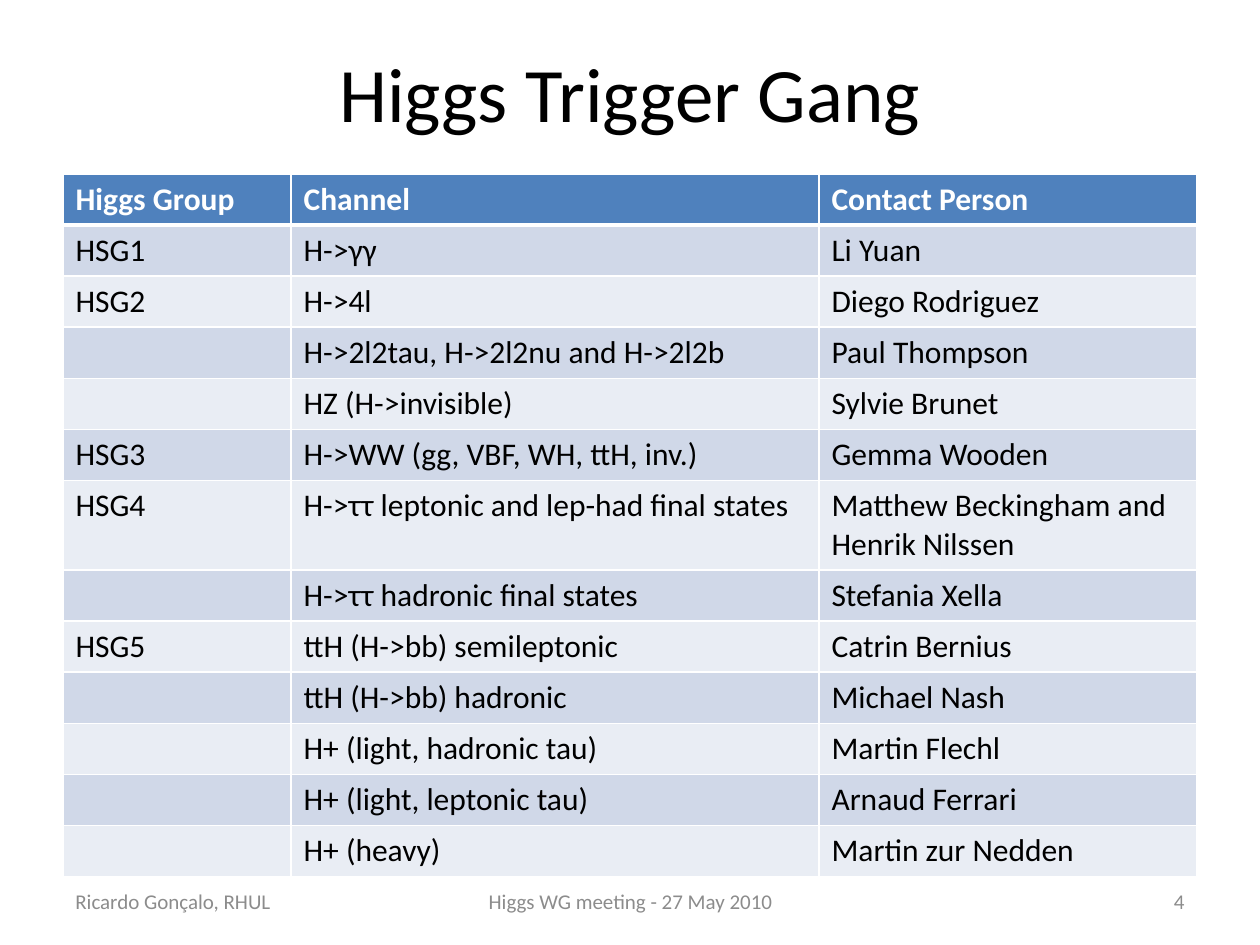
from dataclasses import dataclass
from typing import NamedTuple

from lxml import etree
from pptx import Presentation
from pptx.dml.color import RGBColor
from pptx.enum import text
from pptx.oxml import ns
from pptx.util import Inches, Pt


@dataclass(frozen=True)
class Theme:
    font: str = "Calibri"
    title_size: int = 44
    table_size: int = 18
    footer_size: int = 12
    ink: str = "000000"
    paper: str = "FFFFFF"
    muted: str = "8C8C8C"
    header: str = "4F81BD"
    bands: tuple[str, str] = ("D0D8E8", "E9EDF4")
    thin: int = 1
    thick: int = 3


class Contact(NamedTuple):
    group: str
    channel: str
    person: str


class Footer(NamedTuple):
    content: str
    left: float
    width: float
    alignment: text.PP_ALIGN


THEME = Theme()
HEADINGS = Contact("Higgs Group", "Channel", "Contact Person")
CONTACTS = [
    Contact("HSG1", "H->γγ", "Li Yuan"),
    Contact("HSG2", "H->4l", "Diego Rodriguez"),
    Contact("", "H->2l2tau, H->2l2nu and H->2l2b", "Paul Thompson"),
    Contact("", "HZ (H->invisible)", "Sylvie Brunet"),
    Contact("HSG3", "H->WW (gg, VBF, WH, ttH, inv.)", "Gemma Wooden"),
    Contact("HSG4", "H->ττ leptonic and lep-had final states",
            "Matthew Beckingham and Henrik Nilssen"),
    Contact("", "H->ττ hadronic final states", "Stefania Xella"),
    Contact("HSG5", "ttH (H->bb) semileptonic", "Catrin Bernius"),
    Contact("", "ttH (H->bb) hadronic", "Michael Nash"),
    Contact("", "H+ (light, hadronic tau)", "Martin Flechl"),
    Contact("", "H+ (light, leptonic tau)", "Arnaud Ferrari"),
    Contact("", "H+ (heavy)", "Martin zur Nedden"),
]
FOOTERS = [
    Footer("Ricardo Gonçalo, RHUL", 0.5, 2.33, text.PP_ALIGN.LEFT),
    Footer("Higgs WG meeting - 27 May 2010", 3.42, 3.17, text.PP_ALIGN.CENTER),
    Footer("4", 7.17, 2.33, text.PP_ALIGN.RIGHT),
]
COLUMN_WIDTHS = (1.81, 4.19, 3)
TABLE_HEIGHT = 5.57
TWO_LINE_HEIGHT = 0.71
TWO_LINE_ROW = 6


def add_run(paragraph, content: str, size: int, color: str, bold: bool = False) -> None:
    run = paragraph.add_run()
    run.text = content
    run.font.name = THEME.font
    run.font.size = Pt(size)
    run.font.bold = bold
    run.font.color.rgb = RGBColor.from_string(color)


def add_title(slide, content: str) -> None:
    title = slide.shapes.title
    title.left, title.top = Inches(0.5), Inches(0.3)
    title.width, title.height = Inches(9), Inches(0.86)
    title.text_frame.vertical_anchor = text.MSO_ANCHOR.MIDDLE
    paragraph = title.text_frame.paragraphs[0]
    paragraph.alignment = text.PP_ALIGN.CENTER
    add_run(paragraph, content, THEME.title_size, THEME.ink)


def set_borders(cell, top: int, bottom: int) -> None:
    properties = cell._tc.get_or_add_tcPr()
    widths = {"L": THEME.thin, "R": THEME.thin, "T": top, "B": bottom}
    for side, width in widths.items():
        line = etree.SubElement(properties, ns.qn(f"a:ln{side}"), w=str(Pt(width)))
        fill = etree.SubElement(line, ns.qn("a:solidFill"))
        etree.SubElement(fill, ns.qn("a:srgbClr"), val=THEME.paper)


def fill_row(table, index: int, contact: Contact) -> None:
    is_header = index == 0
    color = THEME.header if is_header else THEME.bands[(index - 1) % 2]
    for column, content in enumerate(contact):
        cell = table.cell(index, column)
        set_borders(cell, THEME.thick if index == 1 else THEME.thin,
                    THEME.thick if is_header else THEME.thin)
        cell.fill.solid()
        cell.fill.fore_color.rgb = RGBColor.from_string(color)
        if content:
            add_run(cell.text_frame.paragraphs[0], content, THEME.table_size,
                    THEME.paper if is_header else THEME.ink, is_header)


def add_contact_table(slide) -> None:
    rows = [HEADINGS, *CONTACTS]
    table = slide.shapes.add_table(
        len(rows), len(COLUMN_WIDTHS), Inches(0.5), Inches(1.38),
        Inches(sum(COLUMN_WIDTHS)), Inches(TABLE_HEIGHT)).table
    for column, width in zip(table.columns, COLUMN_WIDTHS):
        column.width = Inches(width)
    row_height = (TABLE_HEIGHT - TWO_LINE_HEIGHT) / (len(rows) - 1)
    for index, contact in enumerate(rows):
        table.rows[index].height = Inches(
            TWO_LINE_HEIGHT if index == TWO_LINE_ROW else row_height)
        fill_row(table, index, contact)


def add_footer(slide, footer: Footer) -> None:
    shape = slide.shapes.add_textbox(
        Inches(footer.left), Inches(6.95), Inches(footer.width), Inches(0.4))
    shape.text_frame.word_wrap = True
    shape.text_frame.vertical_anchor = text.MSO_ANCHOR.MIDDLE
    paragraph = shape.text_frame.paragraphs[0]
    paragraph.alignment = footer.alignment
    add_run(paragraph, footer.content, THEME.footer_size, THEME.muted)


def main() -> None:
    presentation = Presentation()
    presentation.slide_width, presentation.slide_height = Inches(10), Inches(7.5)
    slide = presentation.slides.add_slide(presentation.slide_layouts[5])
    add_title(slide, "Higgs Trigger Gang")
    add_contact_table(slide)
    for footer in FOOTERS:
        add_footer(slide, footer)
    presentation.save("out.pptx")


if __name__ == "__main__":
    main()
